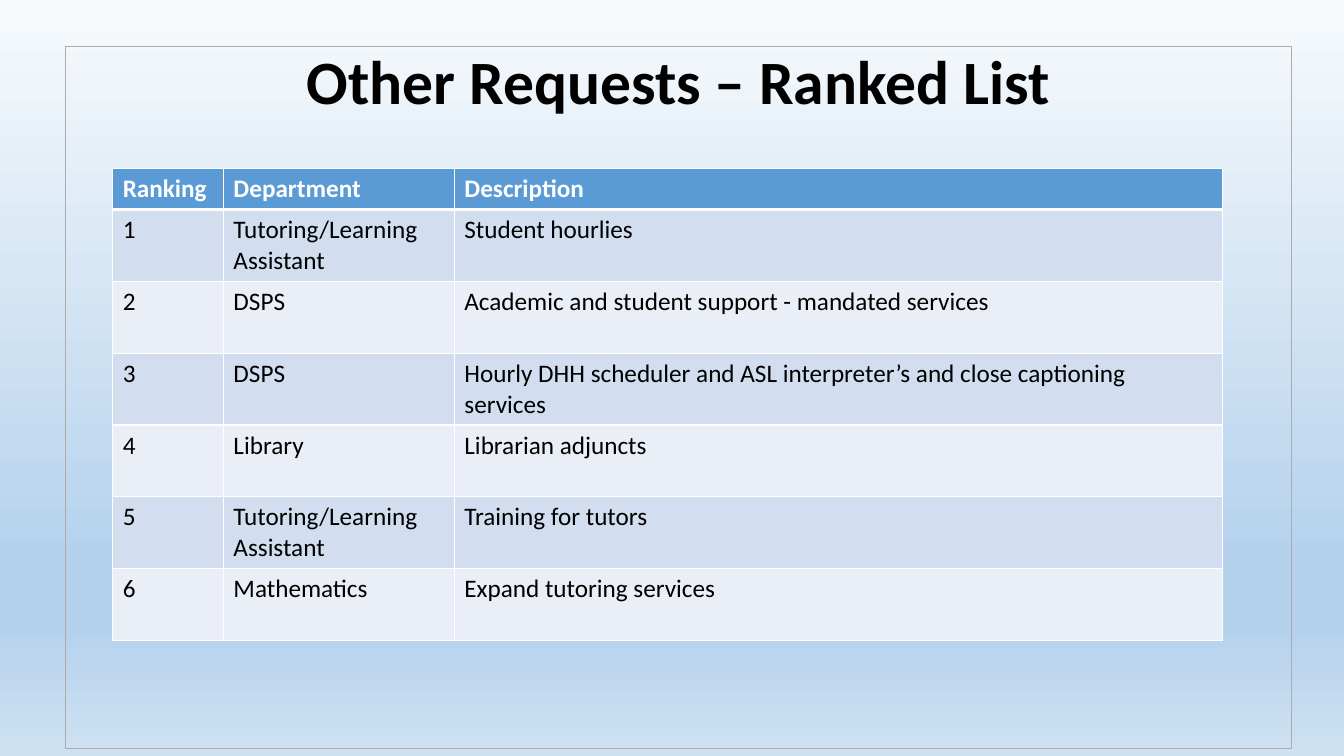
from dataclasses import dataclass

from lxml import etree
from pptx import Presentation
from pptx import util as u
from pptx.dml.color import RGBColor
from pptx.enum import text as t
from pptx.oxml import ns

HUES = {
    "ink": "000000",
    "white": "FFFFFF",
    "frame": "AFABAB",
    "head": "5B9BD5",
    "odd": "D2DEEF",
    "even": "EAEFF7",
}
SKY = [(0, "F7FAFD"), (74, "B5D2EC"), (83, "B5D2EC"), (100, "CEE1F2")]
FONT = "Calibri"
COLS = [2.79, 5.82, 19.35]
HEAD_H, ROW_H = 1.04, 1.81


@dataclass
class Entry:
    rank: str
    dept: str
    desc: str


HEAD = Entry("Ranking", "Department", "Description")
ROWS = [
    Entry("1", "Tutoring/Learning Assistant", "Student hourlies"),
    Entry("2", "DSPS", "Academic and student support - mandated services"),
    Entry("3", "DSPS", "Hourly DHH scheduler and ASL interpreter’s and close captioning services"),
    Entry("4", "Library", "Librarian adjuncts"),
    Entry("5", "Tutoring/Learning Assistant", "Training for tutors"),
    Entry("6", "Mathematics", "Expand tutoring services"),
]


def rgb(name: str) -> RGBColor:
    return RGBColor.from_string(HUES[name])


def style(para, size: int, hue: str, bold: bool) -> None:
    for run in para.runs:
        run.font.name = FONT
        run.font.size = u.Pt(size)
        run.font.bold = bold
        run.font.color.rgb = rgb(hue)


def add_hue(parent, value: str) -> None:
    etree.SubElement(parent, ns.qn("a:srgbClr"), val=value)


def paint_sky(slide) -> None:
    fill = slide.background.fill
    fill.gradient()
    fill.gradient_angle = 270
    stops = next(slide.element.iter(ns.qn("a:gsLst")))
    for old in list(stops):
        stops.remove(old)
    for pos, value in SKY:
        add_hue(etree.SubElement(stops, ns.qn("a:gs"), pos=str(pos * 1000)), value)


def add_title(slide, words: str) -> None:
    title = slide.shapes.title
    title.left, title.top = u.Cm(1.65), u.Cm(1.17)
    title.width, title.height = u.Cm(30.91), u.Cm(17.68)
    title.line.color.rgb = rgb("frame")
    title.line.width = u.Pt(0.75)
    frame = title.text_frame
    frame.text = words
    frame.auto_size = t.MSO_AUTO_SIZE.NONE
    frame.vertical_anchor = t.MSO_ANCHOR.TOP
    para = frame.paragraphs[0]
    para.alignment = t.PP_ALIGN.CENTER
    para.line_spacing = 0.9
    style(para, 44, "ink", True)


def add_edges(cell, top: int, base: int) -> None:
    props = cell._tc.get_or_add_tcPr()
    for side, width in {"L": 1, "R": 1, "T": top, "B": base}.items():
        line = etree.SubElement(props, ns.qn(f"a:ln{side}"), w=str(u.Pt(width)))
        add_hue(etree.SubElement(line, ns.qn("a:solidFill")), HUES["white"])


def add_list(slide, rows: list[Entry]) -> None:
    high = HEAD_H + ROW_H * (len(rows) - 1)
    table = slide.shapes.add_table(
        len(rows), len(COLS), u.Cm(2.84), u.Cm(4.24), u.Cm(sum(COLS)), u.Cm(high)
    ).table
    for col, width in zip(table.columns, COLS):
        col.width = u.Cm(width)
    for i, row in enumerate(rows):
        head = i == 0
        table.rows[i].height = u.Cm(HEAD_H if head else ROW_H)
        band = "head" if head else "odd" if i % 2 else "even"
        for j, words in enumerate((row.rank, row.dept, row.desc)):
            cell = table.cell(i, j)
            # Thick rule between the header and the first row
            add_edges(cell, 3 if i == 1 else 1, 3 if head else 1)
            cell.fill.solid()
            cell.fill.fore_color.rgb = rgb(band)
            cell.text_frame.text = words
            style(cell.text_frame.paragraphs[0], 18, "white" if head else "ink", head)


def main() -> None:
    deck = Presentation()
    deck.slide_width, deck.slide_height = u.Cm(33.87), u.Cm(19.05)
    slide = deck.slides.add_slide(deck.slide_layouts[5])
    # Background, framed title, ranked table
    paint_sky(slide)
    add_title(slide, "Other Requests – Ranked List")
    add_list(slide, [HEAD, *ROWS])
    deck.save("out.pptx")


if __name__ == "__main__":
    main()
